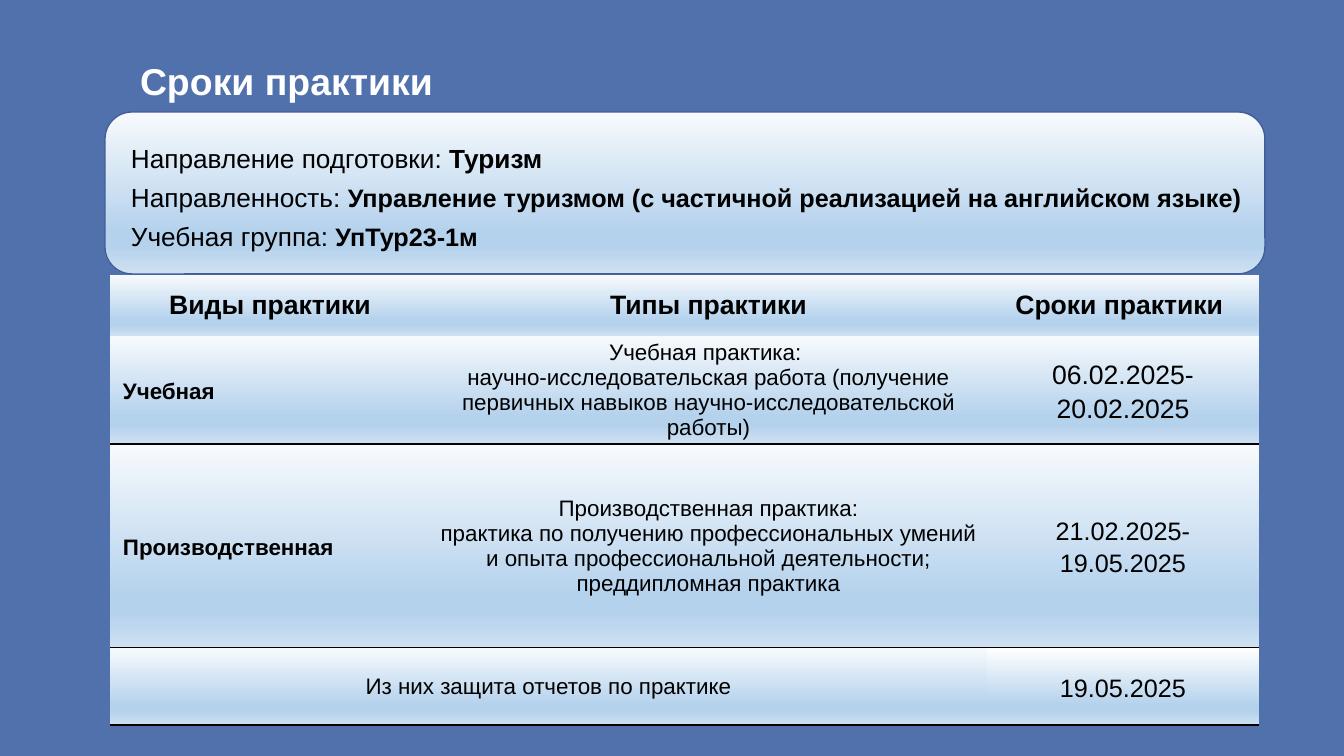
"""Build the slide with the practice schedule."""
import copy
import pptx
import pptx.util
import pptx.dml.color
import pptx.enum.shapes
import pptx.enum.text
import pptx.oxml
import pptx.oxml.ns

SCALE = 12192000 / 1344
MID = pptx.enum.text.MSO_ANCHOR.MIDDLE
LEFT = pptx.enum.text.PP_ALIGN.LEFT
MAIN = pptx.enum.text.PP_ALIGN.CENTER
NS = pptx.oxml.ns.nsdecls("a")


def px(*nums):
    return [pptx.util.Emu(round(num * SCALE)) for num in nums]


def write(frame, paras, align, space, color="000000"):
    for num, runs in enumerate(paras):
        para = frame.add_paragraph() if num else frame.paragraphs[0]
        para.alignment = align
        para.line_spacing = space
        for text, size, bold in runs:
            run = para.add_run()
            run.text = text
            look = {"name": "Arial", "size": pptx.util.Pt(size), "bold": bold}
            for key, value in look.items():
                setattr(run.font, key, value)
            run.font.color.rgb = pptx.dml.color.RGBColor.from_string(color)


deck = pptx.Presentation()
deck.slide_width, deck.slide_height = px(1344, 756)
slide = deck.slides.add_slide(deck.slide_layouts[6])
back = slide.background.fill
back.solid()
back.fore_color.rgb = pptx.dml.color.RGBColor.from_string("5171AC")

stops = [(0, "F7FAFD"), (74, "B5D2EC"), (83, "B5D2EC"), (100, "CEE1F2")]
marks = "".join(f'<a:gs pos="{pos * 1000}"><a:srgbClr val="{tone}"/></a:gs>' for pos, tone in stops)
blend = pptx.oxml.parse_xml(
    f'<a:gradFill {NS} rotWithShape="1"><a:gsLst>{marks}</a:gsLst>'
    '<a:lin ang="5400000" scaled="0"/></a:gradFill>')

panel = slide.shapes.add_shape(
    pptx.enum.shapes.MSO_SHAPE.ROUNDED_RECTANGLE, *px(105, 112, 1160, 162))
panel._element.spPr.append(copy.deepcopy(blend))
panel.line.color.rgb = pptx.dml.color.RGBColor.from_string("435D9A")
panel.line.width = pptx.util.Pt(1)
panel.shadow.inherit = False

title = slide.shapes.add_textbox(*px(127, 30, 1132, 90)).text_frame
pad = px(13)[0]
sides = ["margin_left", "margin_top", "margin_right", "margin_bottom"]
for key, value in {"word_wrap": True, "vertical_anchor": MID, **dict.fromkeys(sides, pad)}.items():
    setattr(title, key, value)
write(title, [[("Сроки практики", 26.7, True)]], LEFT, 1.25, "FFFFFF")

info = slide.shapes.add_textbox(*px(121, 129, 1160, 129)).text_frame
info.word_wrap = True
facts = [
    ("Направление подготовки: ", "Туризм", 18.7),
    ("Направленность: ", "Управление туризмом (с частичной реализацией на английском языке)", 18),
    ("Учебная группа: ", "УпТур23-1м", 18),
]
write(info, [[(label, 18.7, False), (value, size, True)] for label, value, size in facts], LEFT, 1.25)

head = [([name], 19, True, MAIN, 1, False)
        for name in ["Виды практики", "Типы практики", "Сроки практики "]]
study = [
    (["Учебная"], 16, True, LEFT, 1.14, False),
    (["Учебная практика: ",
      "научно-исследовательская работа (получение первичных навыков научно-исследовательской работы)"],
     16, False, MAIN, 1, True),
    (["06.02.2025-20.02.2025"], 19, False, MAIN, 1.14, False),
]
work = [
    (["Производственная"], 16, True, LEFT, 1.14, False),
    (["Производственная практика:", "практика по получению профессиональных умений",
      "и опыта профессиональной деятельности;", "преддипломная практика"],
     16, False, MAIN, 1, True),
    (["21.02.2025-", "19.05.2025"], 18, False, MAIN, 1.14, False),
]
final = [
    (["Из них защита отчетов по практике"], 16, False, MAIN, 1, False),
    (["19.05.2025"], 18, False, MAIN, 1.14, True),
]
grids = [
    (275, [320, 557, 272], [(61, head, ""), (108, study, "B"), (204, work, "TB")]),
    (648, [877, 272], [(77, final, "B")]),
]

for top, widths, rows in grids:
    tall = sum(row[0] for row in rows)
    grid = slide.shapes.add_table(len(rows), len(widths), *px(110, top, sum(widths), tall)).table
    grid.first_row = grid.horz_banding = False
    style = grid._tbl.tblPr.find(pptx.oxml.ns.qn("a:tableStyleId"))
    style.text = "{2D5ABB26-0587-4C30-8999-92F81FD0307C}"
    for col, width in zip(grid.columns, px(*widths)):
        col.width = width
    for y, (high, cells, edges) in enumerate(rows):
        grid.rows[y].height = px(high)[0]
        for x, (lines, size, bold, align, space, tight) in enumerate(cells):
            cell = grid.cell(y, x)
            cell.vertical_anchor = MID
            gaps = px(10, 0, 10, 0) if tight else [pad] * 4
            for key, value in zip(sides, gaps):
                setattr(cell, key, value)
            write(cell.text_frame, [[(line, size, bold)] for line in lines], align, space)
            props = cell._tc.get_or_add_tcPr()
            for edge in edges:
                props.append(pptx.oxml.parse_xml(
                    f'<a:ln{edge} {NS} w="12700"><a:solidFill><a:srgbClr val="000000"/>'
                    f'</a:solidFill></a:ln{edge}>'))
            props.append(copy.deepcopy(blend))

last = grid.cell(0, 1)
last.fill.gradient_stops[0].color.rgb = pptx.dml.color.RGBColor.from_string("FFFFFF")

deck.save("out.pptx")
